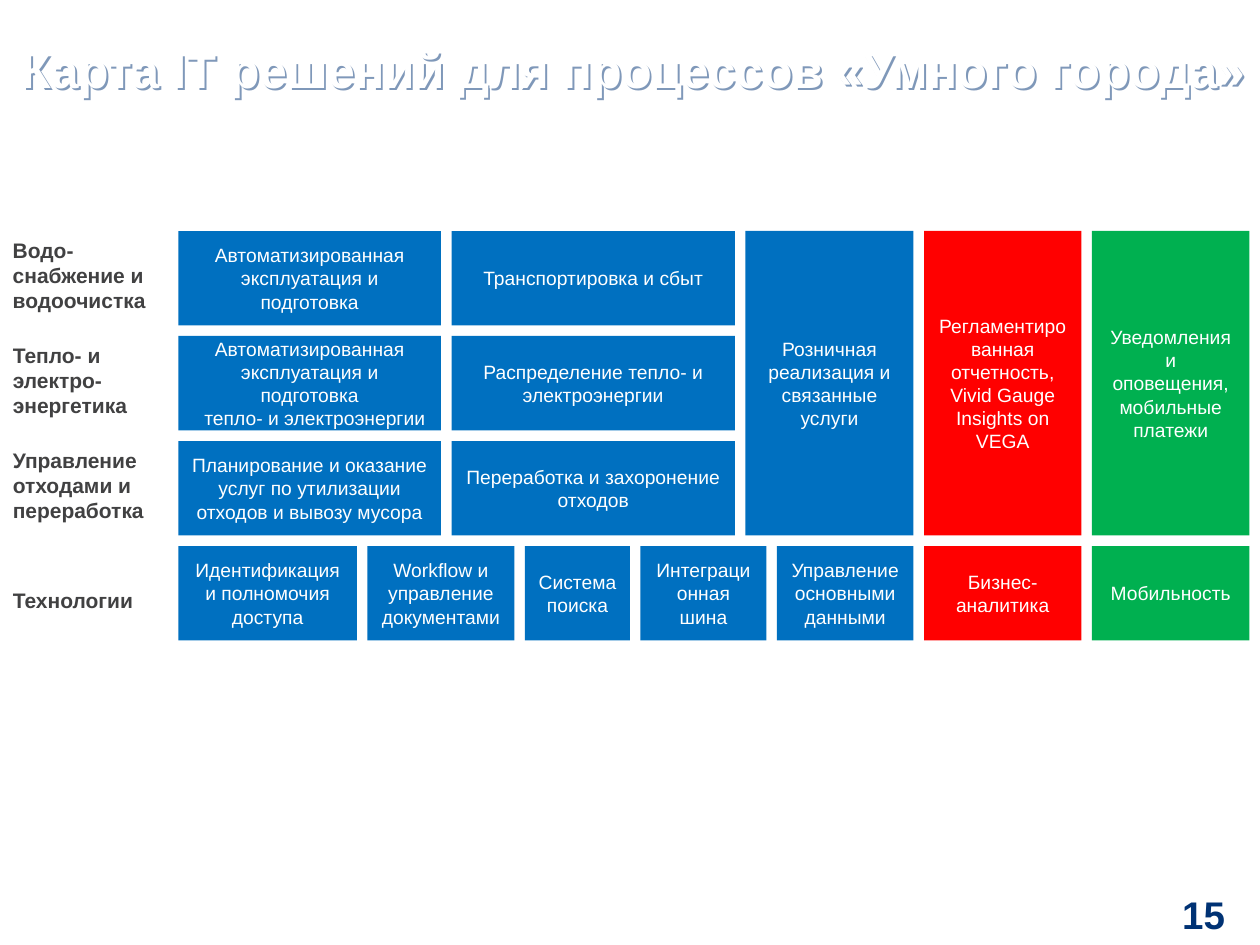
from lxml import etree
from pptx import Presentation
from pptx.dml.color import RGBColor
from pptx.enum.shapes import MSO_SHAPE
from pptx.enum.text import MSO_ANCHOR as Anchor, PP_ALIGN as Align
from pptx.oxml.ns import qn
from pptx.util import Pt

BLUE = RGBColor(0x00, 0x70, 0xC0)
RED = RGBColor(0xFF, 0x00, 0x00)
GREEN = RGBColor(0x00, 0xB0, 0x50)
WHITE = RGBColor(0xFF, 0xFF, 0xFF)
GRAY = RGBColor(0x41, 0x41, 0x42)
NAVY = RGBColor(0x00, 0x32, 0x74)

TITLE = "Карта IT решений для процессов «Умного города»"
PAGE_NUMBER = "15"

# Label, label width, label offset in its row, label height
LABELS = [
    ("Водо-снабжение и водоочистка", 102, 0, 51),
    ("Тепло- и электро-энергетика", 90, 0, 51),
    ("Управление отходами и переработка", 96, 0, 51),
    ("Технологии", 90, 20, 21.6),
]
# Each row of boxes from left to right: text, width, rows spanned, fill
ROWS = [
    [("Автоматизированная эксплуатация и подготовка", 150, 1, BLUE),
     ("Транспортировка и сбыт", 162, 1, BLUE),
     ("Розничная реализация и связанные услуги", 96, 3, BLUE),
     ("Регламентированная отчетность, Vivid Gauge Insights on VEGA", 90, 3, RED),
     ("Уведомления и оповещения, мобильные платежи", 90, 3, GREEN)],
    [("Автоматизированная эксплуатация и подготовка\nтепло- и электроэнергии", 150, 1, BLUE),
     ("Распределение тепло- и электроэнергии", 162, 1, BLUE)],
    [("Планирование и оказание услуг по утилизации отходов и вывозу мусора", 150, 1, BLUE),
     ("Переработка и захоронение отходов", 162, 1, BLUE)],
    [("Идентификация и полномочия доступа", 102, 1, BLUE),
     ("Workflow и управление документами", 84, 1, BLUE),
     ("Система поиска", 60, 1, BLUE),
     ("Интеграционная шина", 72, 1, BLUE),
     ("Управление основными данными", 78, 1, BLUE),
     ("Бизнес-аналитика", 90, 1, RED),
     ("Мобильность", 90, 1, GREEN)],
]
GRID_LEFT, GRID_TOP = 102, 132
ROW_HEIGHT, GAP = 54, 6


def write(shape, text, size=11, color=WHITE, bold=False, align=Align.LEFT,
          anchor=Anchor.TOP, margins=(7.3, 3.6, 7.3, 3.6), spacing=None):
    frame = shape.text_frame
    frame.word_wrap = True
    frame.vertical_anchor = anchor
    (frame.margin_left, frame.margin_top,
     frame.margin_right, frame.margin_bottom) = map(Pt, margins)
    for i, line in enumerate(text.split("\n")):
        paragraph = frame.add_paragraph() if i else frame.paragraphs[0]
        paragraph.alignment = align
        if spacing:
            paragraph.line_spacing = spacing
        if i:
            paragraph._p.get_or_add_pPr().set("marL", str(Pt(6)))
        run = paragraph.add_run()
        run.text = line
        font = run.font
        font.name, font.size, font.bold = "Arial", Pt(size), bold
        font.color.rgb = color


def add_text(slide, left, top, width, height, text, **style):
    box = slide.shapes.add_textbox(Pt(left), Pt(top), Pt(width), Pt(height))
    write(box, text, **style)
    return box


def add_box(slide, left, top, width, height, text, fill):
    box = slide.shapes.add_shape(MSO_SHAPE.RECTANGLE, Pt(left), Pt(top), Pt(width), Pt(height))
    box.shadow.inherit = False
    box.fill.solid()
    box.fill.fore_color.rgb = fill
    box.line.fill.background()
    write(box, text, align=Align.CENTER, anchor=Anchor.MIDDLE)


def add_shadow(shape, color, distance):
    """Cast a half-transparent shadow down and to the right."""
    effects = etree.SubElement(shape._element.spPr, qn("a:effectLst"))
    shadow = etree.SubElement(effects, qn("a:outerShdw"), dist=str(Pt(distance)),
                              dir="2700000", algn="tl", rotWithShape="0")
    tone = etree.SubElement(shadow, qn("a:srgbClr"), val=str(color))
    etree.SubElement(tone, qn("a:alpha"), val="50000")


def main():
    deck = Presentation()
    deck.slide_width, deck.slide_height = Pt(720), Pt(540)
    slide = deck.slides.add_slide(deck.slide_layouts[6])

    title = add_text(slide, 12, 6, 708, 71.3, TITLE, size=28, bold=True,
                     anchor=Anchor.MIDDLE, margins=(0, 0, 0, 0), spacing=0.9)
    add_shadow(title, NAVY, 1.6)

    for i, (label, boxes) in enumerate(zip(LABELS, ROWS)):
        top = GRID_TOP + i * (ROW_HEIGHT + GAP)
        text, width, offset, height = label
        add_text(slide, 0, top + offset, width, height, text,
                 size=12, color=GRAY, bold=True)
        left = GRID_LEFT
        for text, width, span, fill in boxes:
            height = span * (ROW_HEIGHT + GAP) - GAP
            add_box(slide, left, top, width, height, text, fill)
            left += width + GAP

    add_text(slide, 656, 507.6, 64, 29.5, PAGE_NUMBER, size=22, color=NAVY, bold=True,
             align=Align.RIGHT, anchor=Anchor.MIDDLE, margins=(0, 0, 20, 0))
    deck.save("out.pptx")


if __name__ == "__main__":
    main()
